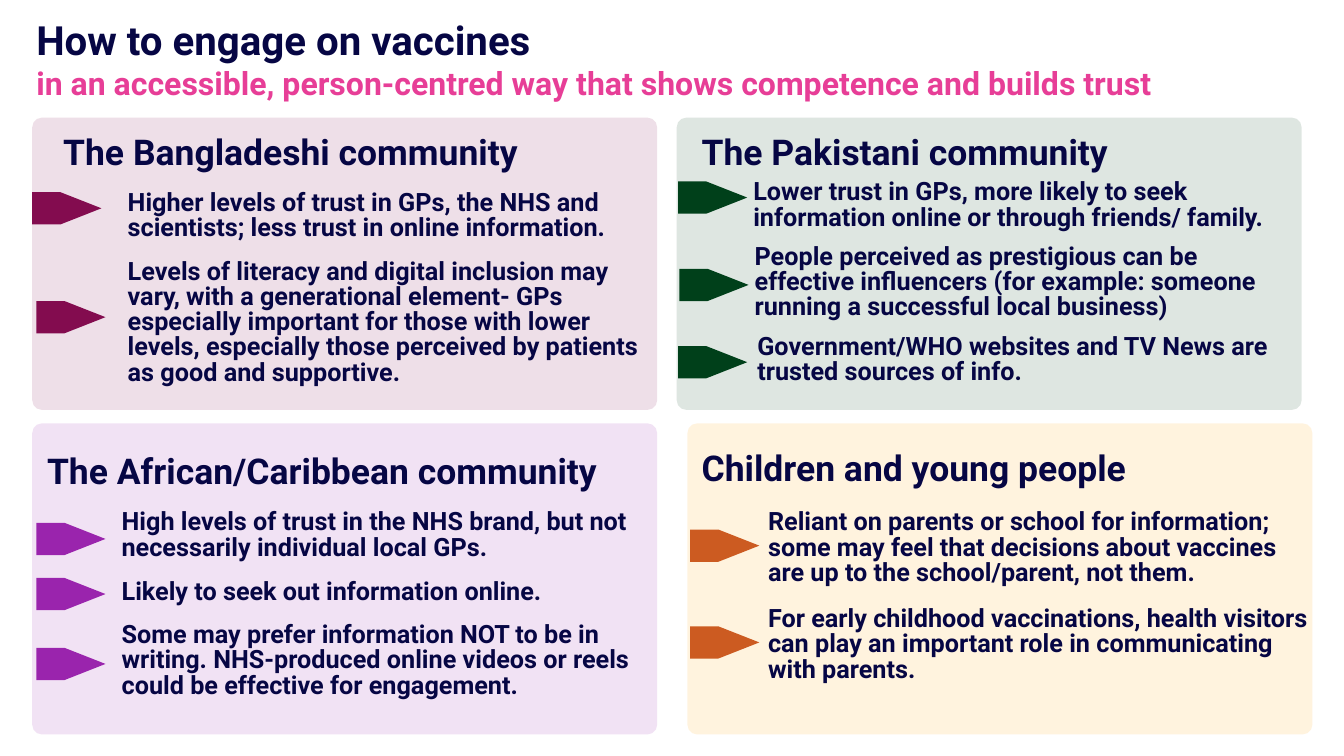
"""Build a slide on engaging four communities about vaccines."""
from lxml.etree import SubElement
from pptx import Presentation
from pptx.dml.color import RGBColor
from pptx.enum.shapes import MSO_SHAPE
from pptx.oxml.ns import qn
from pptx.util import Inches, Pt

COLOURS = {
    "navy": "060644", "pink": "E73E97",
    "plum": "830C4F", "green": "00401A", "purple": "9A24AD",
    "amber": "FFA500", "rust": "CC5B21",
}
FONT = "Roboto"
COLUMNS, ROWS = 20, 11.25
PANEL_WIDTH, CORNER, PANEL_ALPHA = 9.3, 0.145, 13
MARKER_WIDTH, MARKER_HEIGHT, MARKER_TIP = 1.03, 0.48, 0.61
POINT_SIZE, LINE_HEIGHT, LINE_MARGIN = 27, 0.365, 0.08

TITLES = [
    ("How to engage on vaccines", (0.54, 0.1, 16.4, 0.92), 43.1, 60.4, "navy"),
    ("in an accessible, person-centred way that shows competence and builds trust",
     (0.54, 0.85, 18.34, 0.74), 34.3, 48, "pink"),
]

# Each point: text, number of lines, text (left, top), marker (left, top)
COMMUNITIES = [
    {"heading": "The Bangladeshi community", "heading_at": (0.94, 1.83),
     "panel": (0.48, 1.75, 4.35), "tint": "plum", "marker": "plum", "text_width": 7.65,
     "points": [
         ("Higher levels of trust in GPs, the NHS and scientists; less trust in "
          "online information.", 2, (1.9, 2.85), (0.48, 2.86)),
         ("Levels of literacy and digital inclusion may vary, with a generational "
          "element- GPs especially important for those with lower levels, especially "
          "those perceived by patients as good and supportive.",
          5, (1.9, 3.87), (0.54, 4.48)),
     ]},
    {"heading": "The Pakistani community", "heading_at": (10.44, 1.83),
     "panel": (10.07, 1.75, 4.35), "tint": "green", "marker": "green", "text_width": 8.09,
     "points": [
         ("Lower trust in GPs, more likely to seek information online or through "
          "friends/ family.", 2, (11.21, 2.69), (10.09, 2.7)),
         ("People perceived as prestigious can be effective influencers (for example: "
          "someone running a successful local business)",
          3, (11.23, 3.65), (10.11, 4)),
         ("Government/WHO websites and TV News are trusted sources of info.",
          2, (11.27, 4.99), (10.09, 5.15)),
     ]},
    {"heading": "The African/Caribbean community", "heading_at": (0.7, 6.58),
     "panel": (0.48, 6.3, 4.63), "tint": "purple", "marker": "purple", "text_width": 7.65,
     "points": [
         ("High levels of trust in the NHS brand, but not necessarily individual "
          "local GPs.", 2, (1.81, 7.6), (0.54, 7.78)),
         ("Likely to seek out information online.", 1, (1.81, 8.63), (0.54, 8.6)),
         ("Some may prefer information NOT to be in writing. NHS-produced online "
          "videos or reels could be effective for engagement.",
          3, (1.81, 9.28), (0.54, 9.64)),
     ]},
    {"heading": "Children and young people", "heading_at": (10.44, 6.53),
     "panel": (10.23, 6.3, 4.63), "tint": "amber", "marker": "rust", "text_width": 8.09,
     "points": [
         ("Reliant on parents or school for information; some may feel that decisions "
          "about vaccines are up to the school/parent, not them.",
          3, (11.43, 7.6), (10.27, 7.88)),
         ("For early childhood vaccinations, health visitors can play an important "
          "role in communicating with parents.", 3, (11.43, 9.04), (10.27, 9.32)),
     ]},
]


def add_words(slide, words, box, size, spacing, colour="navy"):
    frame = slide.shapes.add_textbox(*map(Inches, box)).text_frame
    frame.word_wrap = True
    frame.margin_left = frame.margin_right = frame.margin_top = frame.margin_bottom = 0
    paragraph = frame.paragraphs[0]
    paragraph.text = words
    paragraph.line_spacing = Pt(spacing)
    paragraph.font.name = FONT
    paragraph.font.size = Pt(size)
    paragraph.font.bold = True
    paragraph.font.color.rgb = RGBColor.from_string(COLOURS[colour])


def add_block(slide, preset, box, adjustment, colour):
    block = slide.shapes.add_shape(preset, *map(Inches, box))
    block.adjustments[0] = adjustment
    block.shadow.inherit = False
    block.fill.solid()
    block.fill.fore_color.rgb = RGBColor.from_string(COLOURS[colour])
    block.line.fill.background()
    return block


def add_panel(slide, left, top, height, tint):
    panel = add_block(slide, MSO_SHAPE.ROUNDED_RECTANGLE,
                      (left, top, PANEL_WIDTH, height), CORNER / height, tint)
    colour = next(panel._element.spPr.iter(qn("a:srgbClr")))
    SubElement(colour, qn("a:alpha"), val=str(PANEL_ALPHA * 1000))


def add_community(slide, community):
    add_panel(slide, *community["panel"], community["tint"])
    add_words(slide, community["heading"], (*community["heading_at"], 8.85, 0.81), 38, 53.2)
    for words, lines, text_at, marker_at in community["points"]:
        add_block(slide, MSO_SHAPE.PENTAGON, (*marker_at, MARKER_WIDTH, MARKER_HEIGHT),
                  MARKER_TIP / MARKER_HEIGHT, community["marker"])
        height = lines * LINE_HEIGHT + LINE_MARGIN
        add_words(slide, words, (*text_at, community["text_width"], height),
                  POINT_SIZE, POINT_SIZE)


def main():
    deck = Presentation()
    deck.slide_width, deck.slide_height = Inches(COLUMNS), Inches(ROWS)
    slide = deck.slides.add_slide(deck.slide_layouts[6])
    for title in TITLES:
        add_words(slide, *title)
    for community in COMMUNITIES:
        add_community(slide, community)
    deck.save("out.pptx")


if __name__ == "__main__":
    main()
